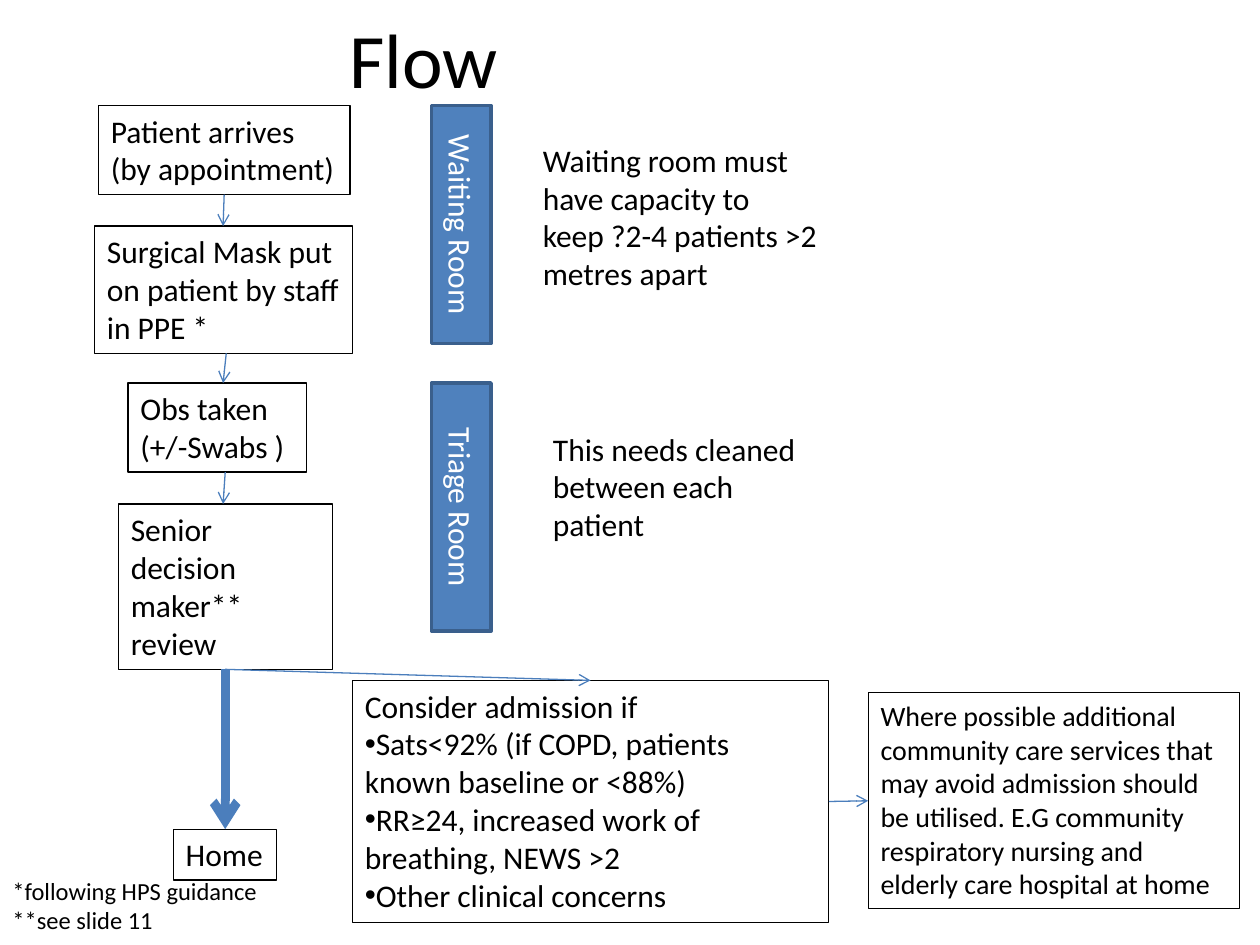
from lxml.etree import SubElement
from pptx import Presentation
from pptx.dml.color import RGBColor
from pptx.enum.shapes import MSO_CONNECTOR, MSO_SHAPE
from pptx.enum.text import MSO_ANCHOR, MSO_AUTO_SIZE, PP_ALIGN
from pptx.oxml.ns import qn
from pptx.util import Pt

BLACK = RGBColor(0x00, 0x00, 0x00)
WHITE = RGBColor(0xFF, 0xFF, 0xFF)
ROOM_FILL = RGBColor(0x4F, 0x81, 0xBD)
ROOM_LINE = RGBColor(0x3A, 0x5F, 0x8C)
ARROW_LINE = RGBColor(0x4B, 0x7E, 0xBC)
FONT = "Calibri"

presentation = Presentation()
presentation.slide_width, presentation.slide_height = Pt(720), Pt(540)
slide = presentation.slides.add_slide(presentation.slide_layouts[5])


def write_line(paragraph, text, size, color=BLACK):
    run = paragraph.add_run()
    run.text = text
    run.font.name = FONT
    run.font.size = Pt(size)
    run.font.color.rgb = color


def add_text(bounds, lines, size=18, wrap=True, outlined=False):
    box = slide.shapes.add_textbox(*[Pt(value) for value in bounds])
    frame = box.text_frame
    frame.word_wrap = wrap
    frame.auto_size = MSO_AUTO_SIZE.SHAPE_TO_FIT_TEXT
    if outlined:
        box.line.color.rgb = BLACK
        box.line.width = Pt(0.75)
    for index, line in enumerate(lines):
        paragraph = frame.add_paragraph() if index else frame.paragraphs[0]
        write_line(paragraph, line, size)
    return box


# Title
title = slide.shapes.title
title.left, title.top, title.width, title.height = Pt(-82), Pt(0), Pt(648), Pt(66)
title.text_frame.vertical_anchor = MSO_ANCHOR.MIDDLE
title_paragraph = title.text_frame.paragraphs[0]
title_paragraph.alignment = PP_ALIGN.CENTER
write_line(title_paragraph, "Flow", 44)

# Patient steps, top to bottom: bounds, lines, wrap
steps = [
    ((56.2, 60.3, 143.8, 50.9), ["Patient arrives", "(by appointment)"], False),
    ((54, 129.2, 147.4, 72.7), ["Surgical Mask put on patient by staff in PPE *"], True),
    ((73.2, 218.9, 102, 50.9), ["Obs taken", "(+/-Swabs )"], False),
    ((67.7, 288, 122.4, 94.5), ["Senior decision maker** review"], True),
    ((99, 473.8, 59, 29.1), ["Home"], False),
]
for bounds, lines, wrap in steps:
    add_text(bounds, lines, wrap=wrap, outlined=True)

# Rooms with vertical labels
for name, top, height in [("Waiting Room", 60.3, 136.1), ("Triage Room", 218.9, 141.8)]:
    room = slide.shapes.add_shape(
        MSO_SHAPE.RECTANGLE, Pt(246.6), Pt(top), Pt(34), Pt(height))
    room.shadow.inherit = False
    room.fill.solid()
    room.fill.fore_color.rgb = ROOM_FILL
    room.line.color.rgb = ROOM_LINE
    room.line.width = Pt(2)
    room.text_frame.word_wrap = True
    room.text_frame.vertical_anchor = MSO_ANCHOR.MIDDLE
    room.text_frame._txBody.bodyPr.set("vert", "vert")
    paragraph = room.text_frame.paragraphs[0]
    paragraph.alignment = PP_ALIGN.CENTER
    write_line(paragraph, name, 18, WHITE)

# Room notes and footnotes
add_text((303.1, 77, 175.7, 94.5),
         ["Waiting room must have capacity to keep ?2-4 patients >2 metres apart"])
add_text((308.9, 242, 172.8, 72.7), ["This needs cleaned between each patient"])
add_text((0, 496.8, 155.5, 41.2),
         ["*following HPS guidance", "**see slide 11"], size=14, wrap=False)

# Admission criteria and community care
admission = add_text(
    (201.4, 388.8, 272.2, 138.2),
    ["Consider admission if",
     "Sats<92% (if COPD, patients known baseline or <88%)",
     "RR≥24, increased work of breathing, NEWS >2",
     "Other clinical concerns"],
    outlined=True)
for paragraph in admission.text_frame.paragraphs[1:]:
    properties = paragraph._p.get_or_add_pPr()
    SubElement(properties, qn("a:buFont")).set("typeface", "Arial")
    SubElement(properties, qn("a:buChar")).set("char", "•")
add_text(
    (496.1, 395.8, 212.4, 123.6),
    ["Where possible additional community care services that may avoid admission "
     "should be utilised. E.G community respiratory nursing and elderly care "
     "hospital at home"],
    size=16, outlined=True)

# Arrows: start, end, line width
arrows = [
    ((128.1, 111.2), (127.5, 129.2), 0.75),
    ((129.3, 201.9), (127.5, 218.9), 0.75),
    ((128.7, 269.8), (127.5, 288), 0.75),
    ((128.7, 382.5), (128.7, 473.8), 5),
    ((128.7, 382.5), (337.5, 388.8), 0.75),
    ((473.6, 458), (496.1, 457.6), 0.75),
]
for start, end, width in arrows:
    arrow = slide.shapes.add_connector(
        MSO_CONNECTOR.STRAIGHT, *[Pt(value) for value in start + end])
    arrow.line.color.rgb = ARROW_LINE
    arrow.line.width = Pt(width)
    SubElement(arrow.line._get_or_add_ln(), qn("a:tailEnd")).set("type", "arrow")
    SubElement(arrow._element.spPr, qn("a:effectLst"))

presentation.save("out.pptx")
